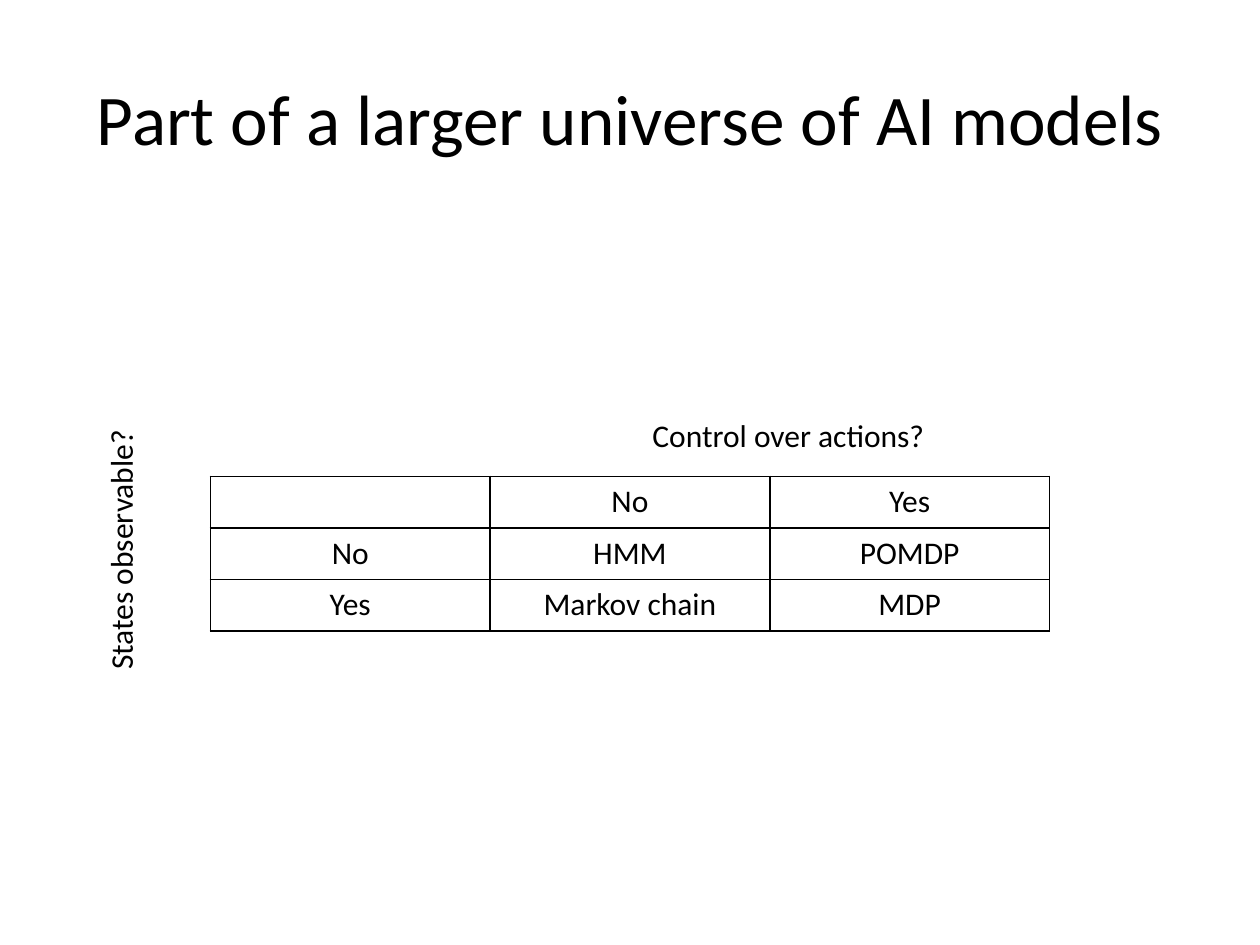
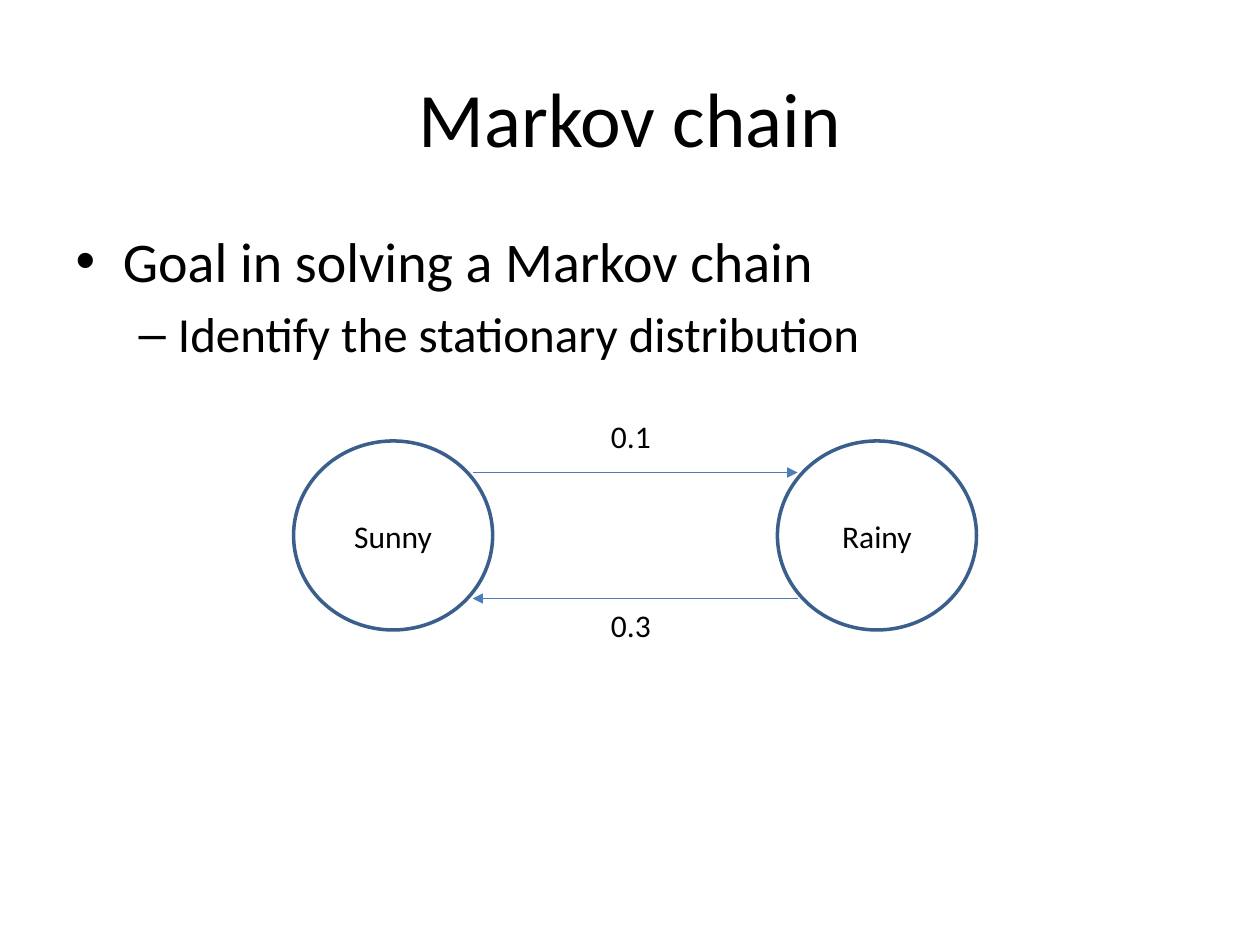
"""Build two slides on AI models: a comparison table and a Markov chain diagram."""
from pptx import Presentation
from pptx.dml.color import RGBColor
from pptx.enum.shapes import MSO_CONNECTOR, MSO_SHAPE
from pptx.enum.text import MSO_ANCHOR, MSO_AUTO_SIZE, PP_ALIGN
from pptx.oxml import parse_xml
from pptx.oxml.ns import nsdecls
from pptx.util import Inches, Pt

COLORS = {"text": "000000", "ring": "3A5F8C", "arrow": "4A7EBB"}
FONT = "Calibri"
TITLE_ONLY, TITLE_AND_BODY = 5, 1


def rgb(name):
    return RGBColor.from_string(COLORS[name])


def write(p, text, size=18, align=None, level=0, before=None):
    p.alignment = align
    p.level = level
    if before is not None:
        p.space_before = Pt(before)
    r = p.add_run()
    r.text = text
    r.font.size = Pt(size)
    r.font.name = FONT
    r.font.color.rgb = rgb("text")


def place(sp, left, top, width, height):
    sp.left, sp.top = Inches(left), Inches(top)
    sp.width, sp.height = Inches(width), Inches(height)
    sp.text_frame.auto_size = MSO_AUTO_SIZE.NONE


def add_slide(prs, layout, title, size=44):
    slide = prs.slides.add_slide(prs.slide_layouts[layout])
    sp = slide.shapes.title
    place(sp, 0.5, 0.3, 9, 1.25)
    sp.text_frame.vertical_anchor = MSO_ANCHOR.MIDDLE
    write(sp.text_frame.paragraphs[0], title, size, PP_ALIGN.CENTER)
    return slide


def fill_body(slide, items):
    sp = slide.placeholders[1]
    place(sp, 0.5, 1.75, 9, 4.95)
    tf = sp.text_frame
    for i, (text, level, size, before) in enumerate(items):
        p = tf.add_paragraph() if i else tf.paragraphs[0]
        write(p, text, size, level=level, before=before)


def add_label(slide, text, left, top, width, rotation=0):
    sp = slide.shapes.add_textbox(Inches(left), Inches(top), Inches(width), Inches(0.7))
    sp.rotation = rotation
    sp.text_frame.word_wrap = True
    write(sp.text_frame.paragraphs[0], text)


def add_borders(cell):
    tc_pr = cell._tc.get_or_add_tcPr()
    for i, side in enumerate(("lnL", "lnR", "lnT", "lnB")):
        tc_pr.insert(i, parse_xml(
            f'<a:{side} {nsdecls("a")} w="{Pt(1)}"><a:solidFill>'
            f'<a:srgbClr val="{COLORS["text"]}"/></a:solidFill></a:{side}>'))


def add_grid(slide, rows, left, top, col_width, row_height):
    n_rows, n_cols = len(rows), len(rows[0])
    table = slide.shapes.add_table(
        n_rows, n_cols, Inches(left), Inches(top),
        Inches(col_width * n_cols), Inches(row_height * n_rows)).table
    table.first_row = table.horz_banding = False
    for r, row in enumerate(rows):
        for c, text in enumerate(row):
            cell = table.cell(r, c)
            cell.fill.background()
            add_borders(cell)
            if text:
                write(cell.text_frame.paragraphs[0], text, align=PP_ALIGN.CENTER)


def add_state(slide, text, left):
    sp = slide.shapes.add_shape(
        MSO_SHAPE.OVAL, Inches(left), Inches(3.5), Inches(1.58), Inches(1.5))
    sp.shadow.inherit = False
    sp.fill.background()
    sp.line.color.rgb = rgb("ring")
    sp.line.width = Pt(2)
    sp.text_frame.vertical_anchor = MSO_ANCHOR.MIDDLE
    write(sp.text_frame.paragraphs[0], text, align=PP_ALIGN.CENTER)


def add_arrow(slide, start, end, y):
    line = slide.shapes.add_connector(
        MSO_CONNECTOR.STRAIGHT, Inches(start), Inches(y), Inches(end), Inches(y))
    line.line.color.rgb = rgb("arrow")
    line.line.width = Pt(0.75)
    line.line._get_or_add_ln().append(
        parse_xml(f'<a:tailEnd {nsdecls("a")} type="triangle"/>'))
    line._element.spPr.append(parse_xml(f'<a:effectLst {nsdecls("a")}/>'))


def build_models(prs):
    slide = add_slide(prs, TITLE_ONLY, "Part of a larger universe of AI models", 40.7)
    rows = [("", "No", "Yes"),
            ("No", "HMM", "POMDP"),
            ("Yes", "Markov chain", "MDP")]
    add_grid(slide, rows, 1.67, 3.78, 2.22, 0.41)
    add_label(slide, "Control over actions?", 5.08, 3.25, 2.5)
    add_label(slide, "States observable?", 0.02, 3.98, 2.17, rotation=270)


def build_markov_chain(prs):
    slide = add_slide(prs, TITLE_AND_BODY, "Markov chain")
    fill_body(slide, [("Goal in solving a Markov chain", 0, 32, 6.4),
                      ("Identify the stationary distribution", 1, 28, 5.6)])
    for state, left in (("Sunny", 2.33), ("Rainy", 6.17)):
        add_state(slide, state, left)
    sunny_x, rainy_x = 3.75, 6.33
    add_arrow(slide, sunny_x, rainy_x, 3.75)
    add_arrow(slide, rainy_x, sunny_x, 4.75)
    for probability, top in (("0.1", 3.26), ("0.3", 4.76)):
        add_label(slide, probability, 4.75, top, 0.58)


def main():
    prs = Presentation()
    prs.slide_width, prs.slide_height = Inches(10), Inches(7.5)
    build_models(prs)
    build_markov_chain(prs)
    prs.save("out.pptx")


if __name__ == "__main__":
    main()
